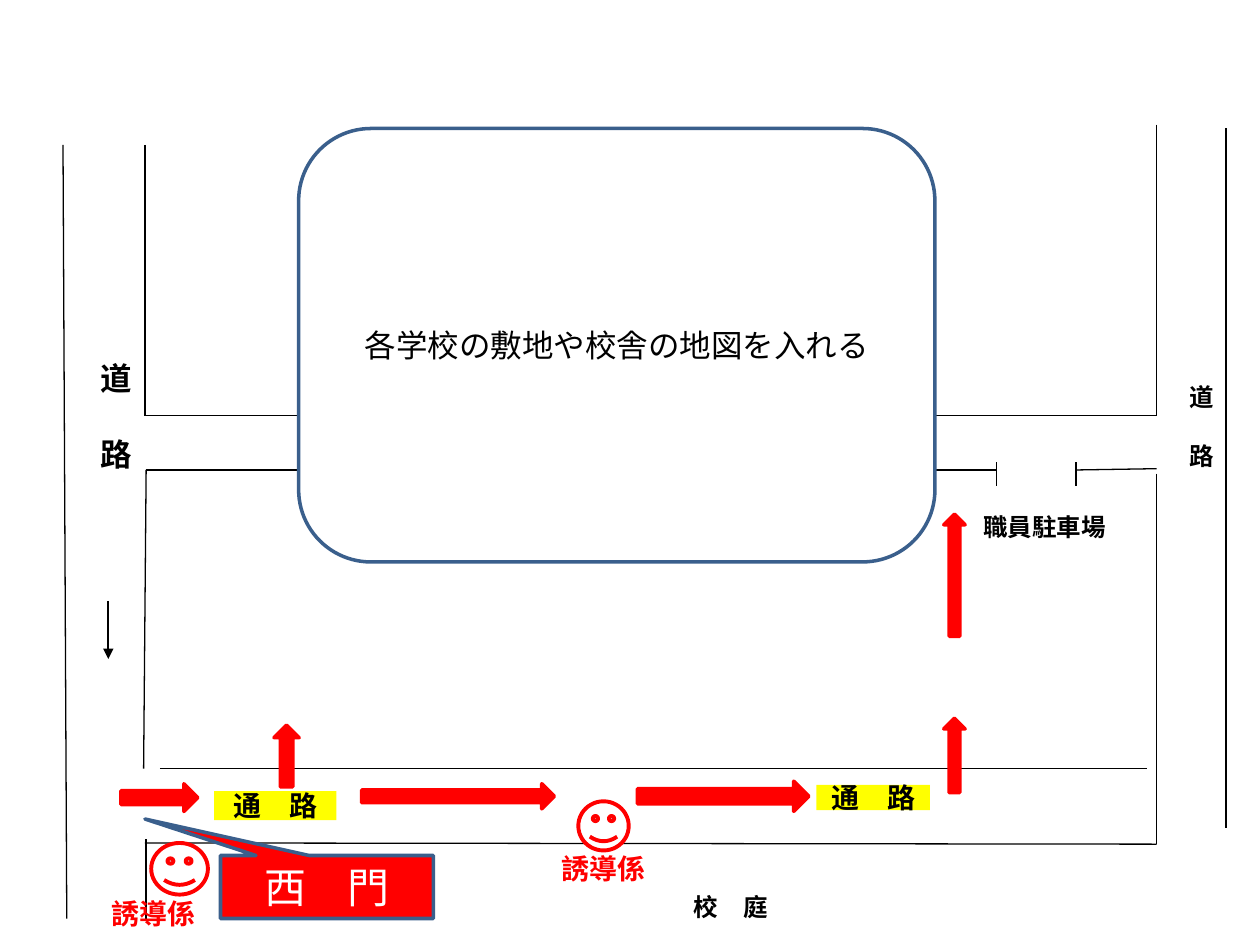
import collections
import pptx
import pptx.dml.color
import pptx.enum.shapes
import pptx.enum.text
import pptx.oxml
import pptx.oxml.ns
import pptx.util

Inches = pptx.util.Inches
Pt = pptx.util.Pt
RGBColor = pptx.dml.color.RGBColor
Shape = pptx.enum.shapes.MSO_SHAPE

BLACK = RGBColor(0x00, 0x00, 0x00)
WHITE = RGBColor(0xFF, 0xFF, 0xFF)
RED = RGBColor(0xFF, 0x00, 0x00)
YELLOW = RGBColor(0xFF, 0xFF, 0x00)
NAVY = RGBColor(0x3A, 0x5F, 0x8C)
LATIN = "Calibri"
JAPANESE = "Noto Sans CJK JP"

Box = collections.namedtuple("Box", "left top width height")


def within(box, left, top, width, height):
    return Box(box.left + left, box.top + top, width, height)


def add_drawing_child(parent, tag, **attributes):
    child = parent.makeelement(pptx.oxml.ns.qn(tag), attributes)
    parent.append(child)
    return child


def add_line(page, box, start, end, weight=0.75, arrow=False):
    line = page.shapes.add_connector(
        pptx.enum.shapes.MSO_CONNECTOR.STRAIGHT,
        Inches(box.left + start[0]), Inches(box.top + start[1]),
        Inches(box.left + end[0]), Inches(box.top + end[1]))
    line.line.color.rgb = BLACK
    line.line.width = Pt(weight)
    if arrow:
        add_drawing_child(line.line._get_or_add_ln(), "a:tailEnd", type="triangle")
    add_drawing_child(line._element.spPr, "a:effectLst")


def write(shape, lines, size, bold=True, color=BLACK, font=LATIN):
    frame = shape.text_frame
    frame.word_wrap = True
    frame.vertical_anchor = pptx.enum.text.MSO_ANCHOR.MIDDLE
    frame.text = "\n".join(lines)
    for para in frame.paragraphs:
        para.alignment = pptx.enum.text.PP_ALIGN.CENTER
        for span in para.runs:
            span.font.size = Pt(size)
            span.font.bold = bold
            span.font.color.rgb = color
            span.font.name = font
            if font == JAPANESE:
                add_drawing_child(span.font._element, "a:ea", typeface=font)


def add_label(page, box, lines, size, **style):
    label = page.shapes.add_textbox(*map(Inches, box))
    write(label, lines, size, **style)


def add_block(page, kind, box, fill, outline=None, weight=2):
    block = page.shapes.add_shape(kind, *map(Inches, box))
    block.shadow.inherit = False
    block.fill.solid()
    block.fill.fore_color.rgb = fill
    if outline is None:
        block.line.fill.background()
    else:
        block.line.color.rgb = outline
        block.line.width = Pt(weight)
    return block


def add_route(page, box, upward=False):
    arrow = add_block(page, Shape.RIGHT_ARROW, box, RED, RED)
    arrow.rotation = 270 if upward else 0


def add_guide(page, face, label):
    add_block(page, Shape.SMILEY_FACE, face, WHITE, RED, 2.25)
    add_label(page, label, ["誘導係"], 16, color=RED, font=JAPANESE)


def draw_left_road(page, box):
    right = box.width
    add_line(page, box, (0, 0), (0.03, box.height))
    add_line(page, box, (right - 0.01, 0), (right - 0.01, 2.15))
    add_line(page, box, (right, 2.58), (right - 0.02, 4.95))
    add_line(page, box, (right, 5.51), (right, box.height))
    add_line(page, box, (0.36, 3.62), (0.36, 4.08), 1, arrow=True)
    add_label(page, within(box, 0.2, 1.4, 0.32, 1.5), ["道　", "路"], 18)


def draw_right_road(page, box):
    add_line(page, box, (0, 0), (0, 2.31))
    add_line(page, box, (0, 2.77), (0, box.height))
    add_line(page, box, (box.width, 0.03), (box.width, 5.58))
    add_label(page, within(box, 0.16, 1.64, 0.32, 1.5), ["道　", "路"], 14)


def draw_building_lane(page, box):
    gate_left, gate_right = 6.75, 7.38
    add_line(page, box, (0, 0), (box.width, 0))
    add_line(page, box, (0, box.height), (gate_left, box.height))
    add_line(page, box, (gate_right, box.height), (box.width, box.height - 0.01))
    for post in (gate_left, gate_right):
        add_line(page, box, (post, 0.37), (post, 0.56))
    add_label(page, within(box, 6.49, 0.73, 1.28, 0.3), ["職員駐車場"], 14)


def draw_passage(page, box):
    add_line(page, box, (0, 0.59), (box.width, box.height))
    add_line(page, box, (0.12, 0), (7.95, 0))
    for sign in (within(box, 0.55, 0.18, 0.97, 0.23), within(box, 5.33, 0.13, 0.9, 0.2)):
        write(add_block(page, Shape.RECTANGLE, sign, YELLOW), ["通　路"], 16)
    for left, top, width, height in (
            (-0.19, 0.12, 0.61, 0.22), (1.72, 0.12, 1.53, 0.2), (3.91, 0.1, 1.36, 0.24)):
        add_route(page, within(box, left, top, width, height))
    for left, top, width, height in (
            (0.88, -0.2, 0.49, 0.2), (6.13, -0.19, 0.59, 0.17), (5.94, -1.62, 0.97, 0.17)):
        add_route(page, within(box, left, top, width, height), upward=True)
    add_guide(page, within(box, 3.44, 0.26, 0.4, 0.39), within(box, 3.14, 0.59, 1, 0.41))
    add_label(page, within(box, 3.94, 0.94, 1.42, 0.31), ["校　庭"], 14)


def draw_west_gate(page, box):
    gate = add_block(page, Shape.RECTANGULAR_CALLOUT,
                     within(box, 1.03, 0.1, 1.69, 0.5), RED, NAVY)
    gate.adjustments[0] = -0.855
    gate.adjustments[1] = -1.08
    write(gate, ["西　門"], 24, bold=False, color=WHITE, font=JAPANESE)
    add_guide(page, within(box, 0.48, 0, 0.45, 0.41), within(box, 0, 0.36, 1, 0.4))


def draw_school_map(page, box):
    area = add_block(page, Shape.ROUNDED_RECTANGLE, box, WHITE, NAVY)
    write(area, ["各学校の敷地や校舎の地図を入れる"], 18, bold=False)


def main():
    deck = pptx.Presentation()
    deck.slide_width = Inches(10)
    deck.slide_height = Inches(7.5)
    page = deck.slides.add_slide(deck.slide_layouts[6])
    draw_left_road(page, Box(0.5, 1.15, 0.66, 6.14))
    draw_right_road(page, Box(9.18, 0.99, 0.55, 5.71))
    draw_building_lane(page, Box(1.16, 3.3, 8.02, 0.43))
    draw_passage(page, Box(1.15, 6.1, 8.03, 0.6))
    draw_west_gate(page, Box(0.72, 6.69, 2.72, 0.76))
    draw_school_map(page, Box(2.37, 1.02, 5.05, 3.44))
    deck.save("out.pptx")


if __name__ == "__main__":
    main()
